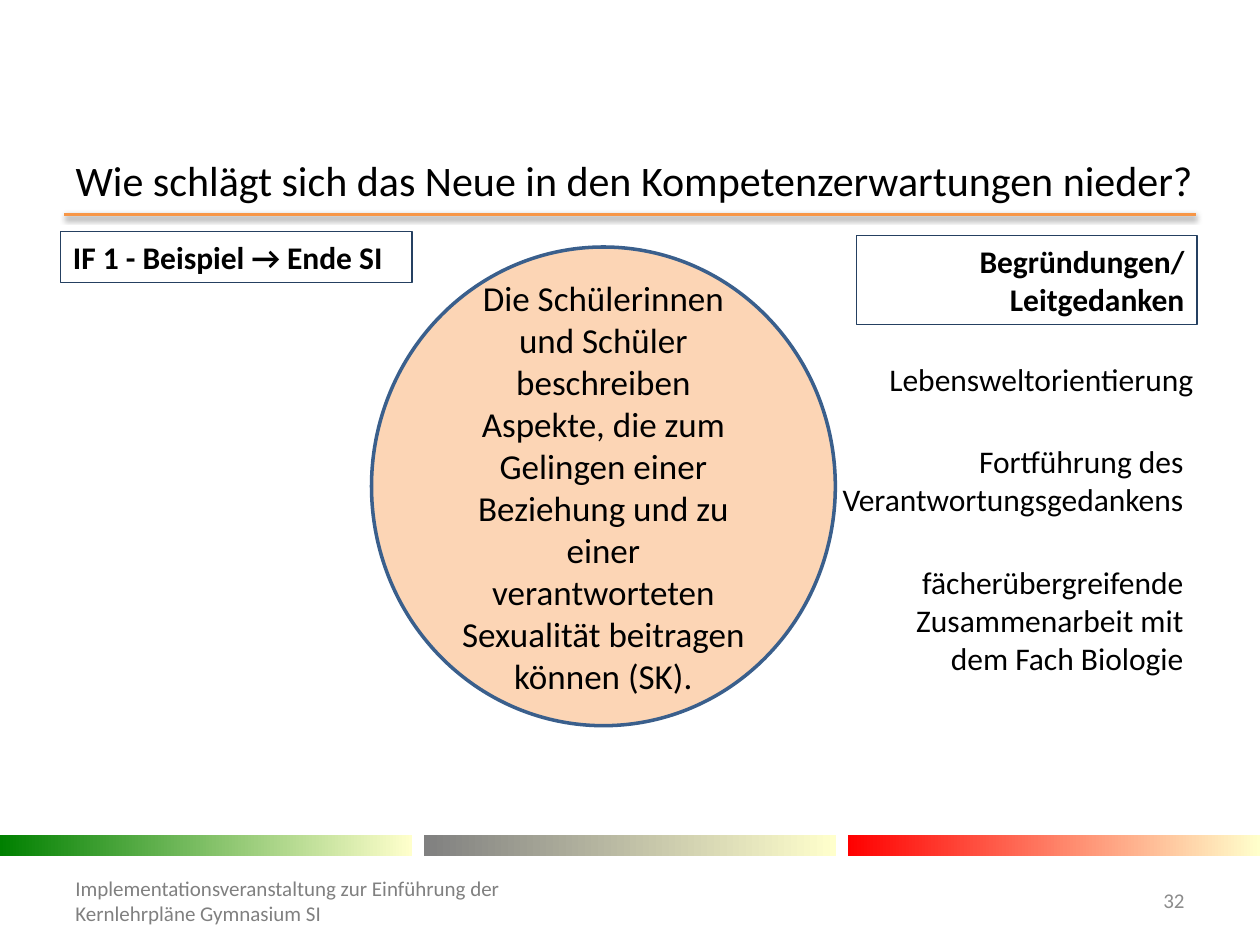
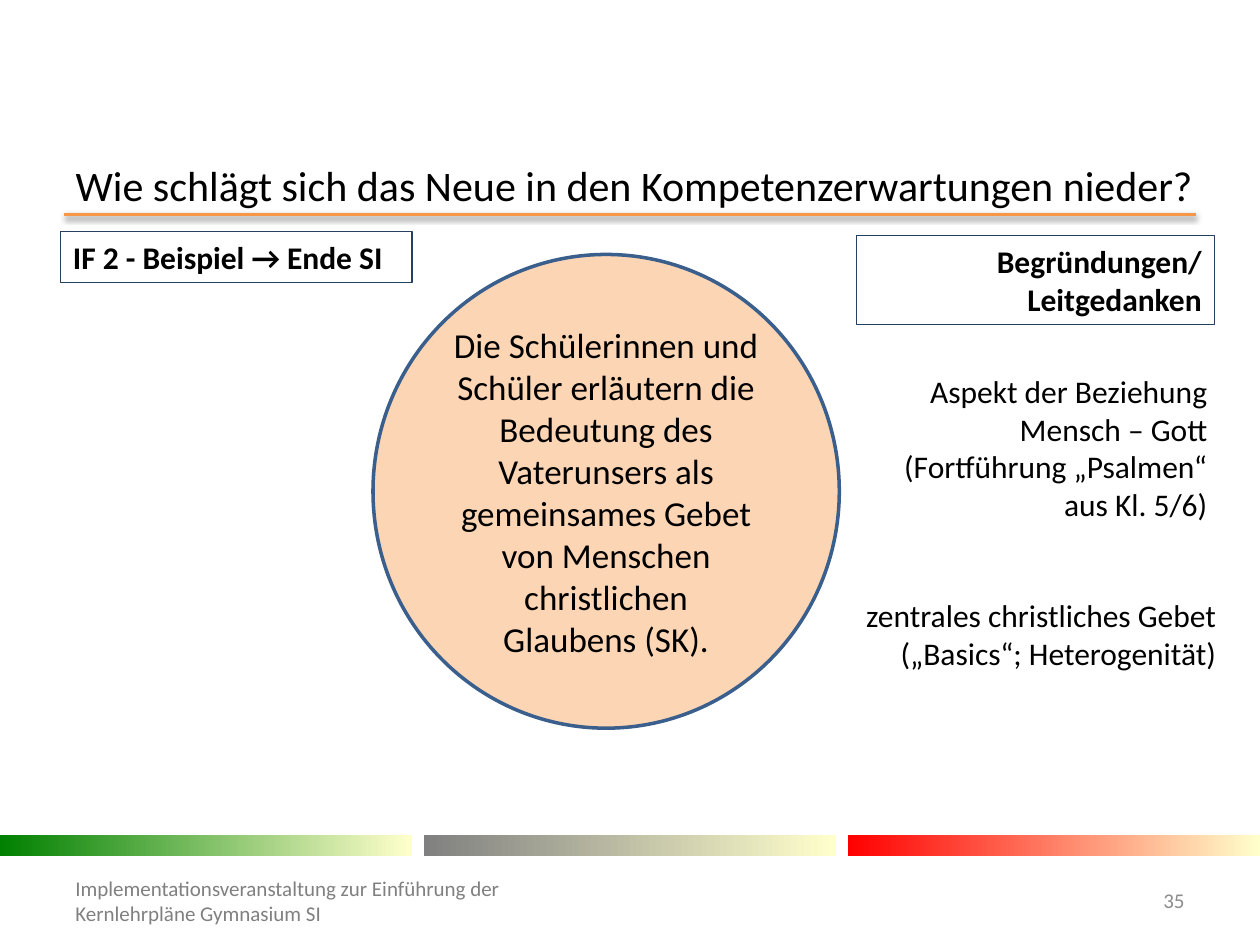
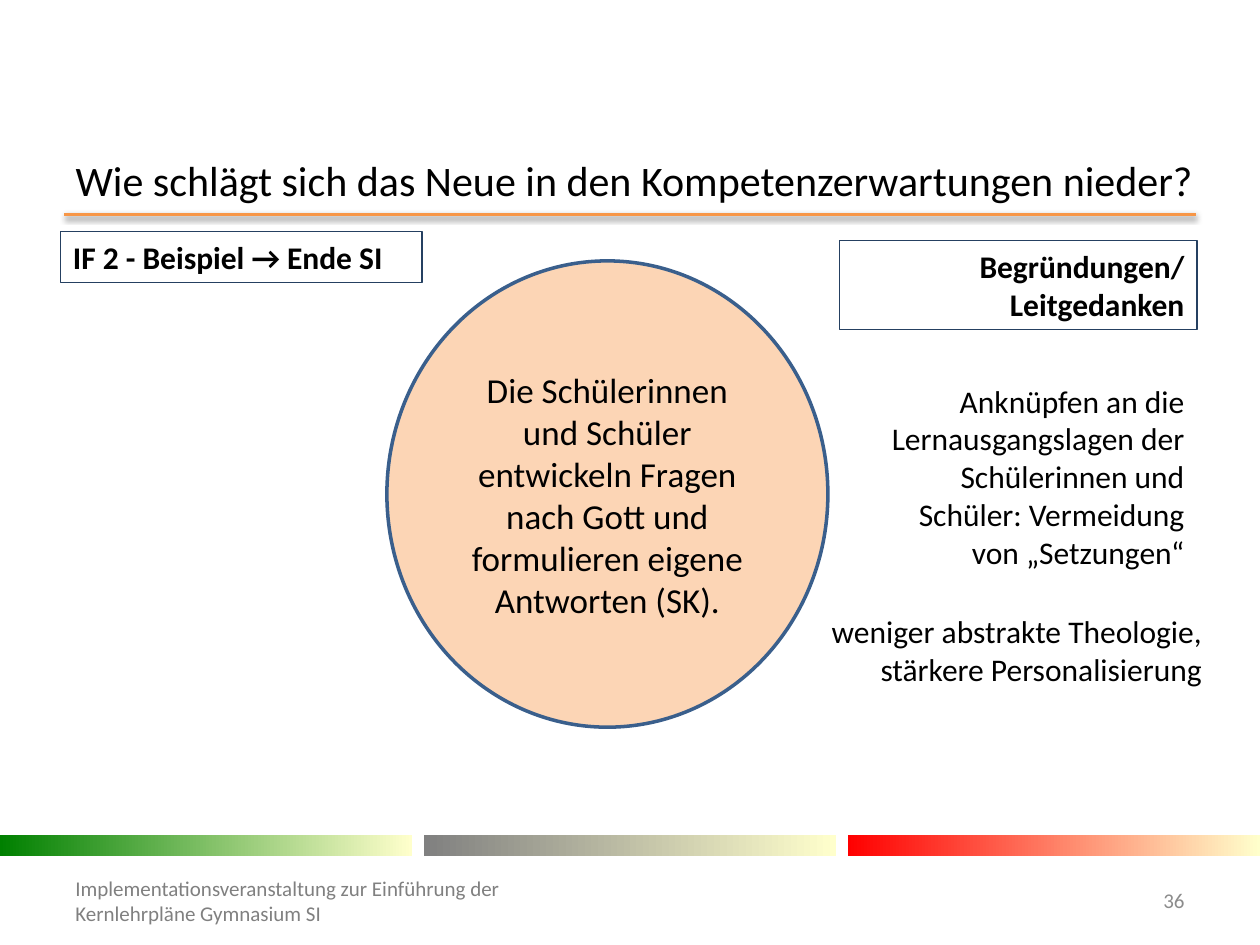
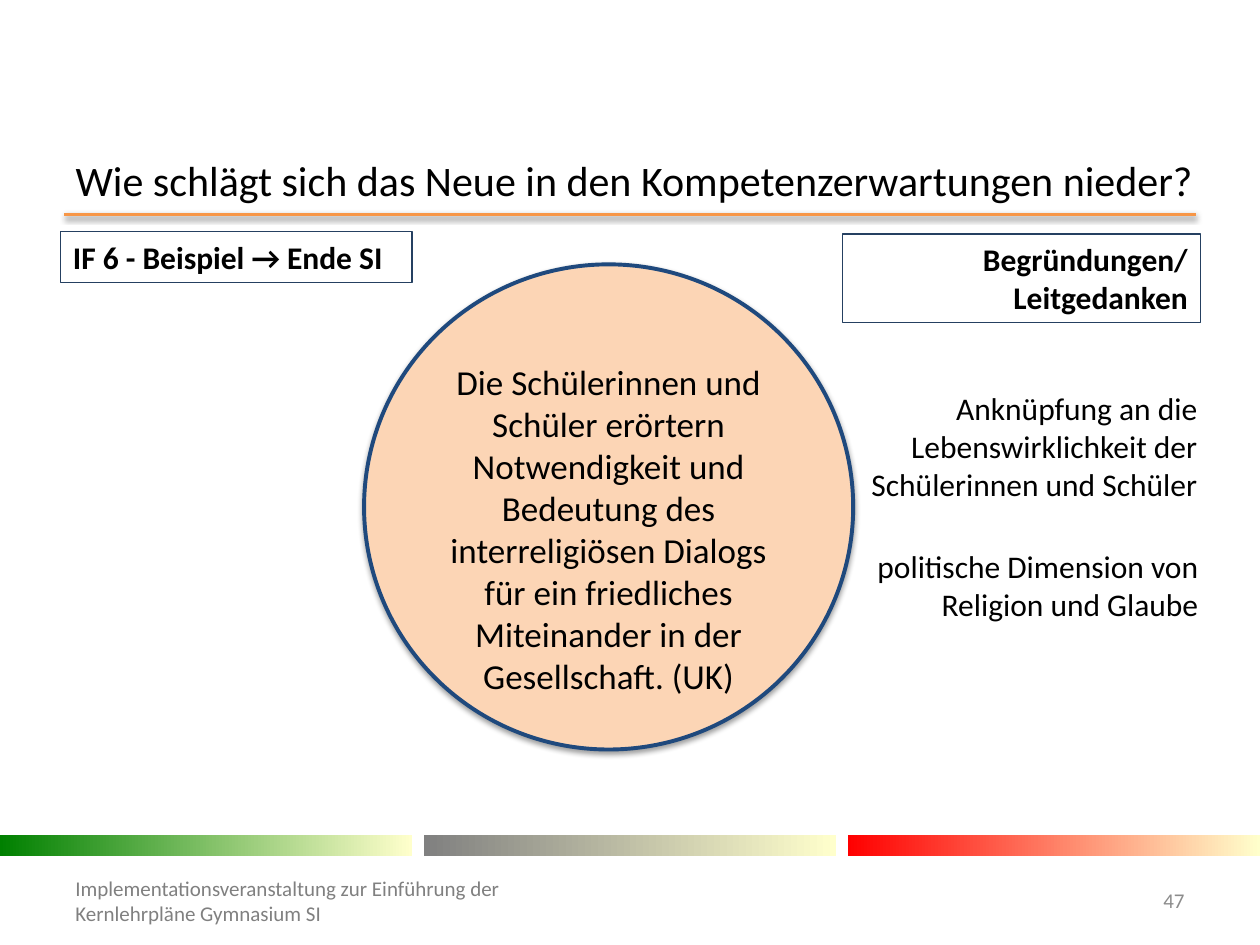
from lxml import etree
from pptx import Presentation
from pptx.dml.color import RGBColor
from pptx.enum.shapes import MSO_CONNECTOR, MSO_SHAPE
from pptx.enum.text import MSO_ANCHOR, MSO_AUTO_SIZE, PP_ALIGN
from pptx.oxml.ns import qn
from pptx.util import Cm, Pt

LEFT, CENTER, RIGHT = PP_ALIGN.LEFT, PP_ALIGN.CENTER, PP_ALIGN.RIGHT
TOP, MIDDLE = MSO_ANCHOR.TOP, MSO_ANCHOR.MIDDLE
RECTANGLE, OVAL = MSO_SHAPE.RECTANGLE, MSO_SHAPE.OVAL
STRAIGHT = MSO_CONNECTOR.STRAIGHT
NO_AUTOFIT, GROW = MSO_AUTO_SIZE.NONE, MSO_AUTO_SIZE.SHAPE_TO_FIT_TEXT

# Shared measures (cm), colours and text formats
SLIDE_WIDTH, SLIDE_HEIGHT = 25.4, 19.05
TITLE_LEFT, TITLE_WIDTH, TITLE_HEIGHT = 1.27, 23.5, 1
BAND_TOP, BAND_WIDTH, BAND_HEIGHT = 16.84, 8.31, 0.41
TEXT_MARGIN, LINE_HEIGHT = 0.25, 0.77
BLACK, ORANGE, PEACH, PALE_YELLOW = "000000", "F79646", "FCD5B5", "FFFFCC"
BAND_COLORS = ("008000", "808080", "FF0000")
FRAME_BLUE, CIRCLE_BLUE, DARK_BLUE = "254061", "3A5F8C", "1F497D"

TITLE_FORMAT = {"name": "Calibri", "size": Pt(24), "bold": False}
CIRCLE_FORMAT = {"name": "Calibri", "size": Pt(20)}
LABEL_FORMAT = {"name": "Calibri", "size": Pt(18), "bold": True}
NOTE_FORMAT = {"name": "Calibri", "size": Pt(18)}
FOOTER_FORMAT = {"name": "Calibri", "size": Pt(12)}

TITLE = "Wie schlägt sich das Neue in den Kompetenzerwartungen nieder?"
FOOTER = ("Implementationsveranstaltung zur Einführung der "
          "Kernlehrpläne Gymnasium SI")

# circle: left, top, width, height; reasons: left, top, width
# notes: right edge and top relative to the reasons box, width, lines, text
SLIDES = [
    {"number": 32, "topic": "IF 1", "circle": (7.49, 4.98, 9.35, 9.65),
     "text": "Die Schülerinnen und Schüler beschreiben Aspekte, die zum "
             "Gelingen einer Beziehung und zu einer verantworteten "
             "Sexualität beitragen können (SK).",
     "reasons": (17.27, 4.75, 6.86),
     "notes": [
         (0.18, 2.39, 7.11, 1, "Lebensweltorientierung"),
         (-0.02, 4.04, 7.8, 2, "Fortführung des Verantwortungsgedankens"),
         (-0.02, 6.48, 6.12, 3, "fächerübergreifende Zusammenarbeit mit "
                                "dem Fach Biologie")]},
    {"number": 35, "topic": "IF 2", "circle": (7.52, 5.13, 9.4, 9.55),
     "title_top": 3.23,
     "text": "Die Schülerinnen und Schüler erläutern die Bedeutung des "
             "Vaterunsers als gemeinsames Gebet von Menschen christlichen "
             "Glaubens (SK).",
     "reasons": (17.27, 4.75, 7.21),
     "notes": [
         (0.11, 2.62, 7.19, 4, "Aspekt der Beziehung Mensch – Gott "
                               "(Fortführung „Psalmen“ aus Kl. 5/6)"),
         (0.29, 7.14, 8.51, 2, "zentrales christliches Gebet "
                               "(„Basics“; Heterogenität)")]},
    {"number": 36, "topic": "IF 2", "circle": (7.8, 5.26, 8.89, 9.4),
     "topic_width": 7.29,
     "text": "Die Schülerinnen und Schüler entwickeln Fragen nach Gott und "
             "formulieren eigene Antworten (SK).",
     "reasons": (16.92, 4.85, 7.21),
     "notes": [
         (0, 2.72, 6.81, 5, "Anknüpfen an die Lernausgangslagen der "
                            "Schülerinnen und Schüler: Vermeidung von "
                            "„Setzungen“"),
         (0.35, 7.37, 9.19, 2, "weniger abstrakte Theologie, stärkere "
                               "Personalisierung")]},
    {"number": 47, "topic": "IF 6", "circle": (7.34, 5.33, 9.86, 9.78),
     "circle_style": {"line": DARK_BLUE, "weight": 2.25, "shadow": True,
                      "margin_top": 0.99},
     "text": "Die Schülerinnen und Schüler erörtern Notwendigkeit und "
             "Bedeutung des interreligiösen Dialogs für ein friedliches "
             "Miteinander in der Gesellschaft. (UK)",
     "reasons": (16.99, 4.72, 7.21),
     "notes": [
         (0.19, 3, 7.7, 3, "Anknüpfung an die Lebenswirklichkeit der "
                           "Schülerinnen und Schüler"),
         (0.21, 6.18, 7.21, 2, "politische Dimension von Religion und "
                               "Glaube")]},
]


# Helpers
def color(hex_value):
    return RGBColor.from_string(hex_value)


def lengths(box):
    return [Cm(value) for value in box]


def text_height(lines):
    return TEXT_MARGIN + LINE_HEIGHT * lines


def set_effects(shape, shadow=False):
    """Replace the theme effects by a soft drop shadow or by nothing."""
    effects = etree.SubElement(shape.element.spPr, qn("a:effectLst"))
    if shadow:
        outer = etree.SubElement(effects, qn("a:outerShdw"), blurRad="40000",
                                 dist="20000", dir="5400000", rotWithShape="0")
        tint = etree.SubElement(outer, qn("a:srgbClr"), val=BLACK)
        etree.SubElement(tint, qn("a:alpha"), val="38000")


def set_line(shape, hex_value, weight):
    shape.line.color.rgb = color(hex_value)
    shape.line.width = Pt(weight)


def write_text(shape, lines, font_format, align=LEFT, anchor=TOP,
               hex_value=BLACK, auto_size=NO_AUTOFIT):
    frame = shape.text_frame
    frame.text = "\n".join(lines)
    settings = {"word_wrap": True, "vertical_anchor": anchor,
                "auto_size": auto_size}
    for name, value in settings.items():
        setattr(frame, name, value)
    for paragraph in frame.paragraphs:
        paragraph.alignment = align
        font = paragraph.runs[0].font
        for name, value in font_format.items():
            setattr(font, name, value)
        font.color.rgb = color(hex_value)


def add_text(slide, box, text, font_format, **options):
    shape = slide.shapes.add_textbox(*lengths(box))
    write_text(shape, [text], font_format, **options)


def add_label(slide, box, lines, align=LEFT):
    label = slide.shapes.add_shape(RECTANGLE, *lengths(box))
    label.fill.background()
    set_line(label, FRAME_BLUE, 0.75)
    set_effects(label)
    write_text(label, lines, LABEL_FORMAT, align=align, auto_size=GROW)


# Title rule and colour bands, kept on the layout for all slides
def build_layout(slide, layout):
    rule = slide.shapes.add_connector(STRAIGHT, *lengths((1.3, 4.32, 24.1, 4.32)))
    set_line(rule, ORANGE, 2)
    set_effects(rule, shadow=True)
    parts = [rule]

    pitch = (SLIDE_WIDTH - BAND_WIDTH) / (len(BAND_COLORS) - 1)
    for index, band_color in enumerate(BAND_COLORS):
        band = slide.shapes.add_shape(RECTANGLE, *lengths(
            (index * pitch, BAND_TOP, BAND_WIDTH, BAND_HEIGHT)))
        band.fill.gradient()
        band.fill.gradient_angle = 0
        for stop, hex_value in zip(band.fill.gradient_stops,
                                   (band_color, PALE_YELLOW)):
            stop.color.rgb = color(hex_value)
        band.line.fill.background()
        set_effects(band)
        parts.append(band)

    for number, part in enumerate(parts, start=100):
        part.element.xpath(".//p:cNvPr")[0].set("id", str(number))
        layout.element.cSld.spTree.append(part.element)


# Title, footer and page number
def add_title(slide, top):
    title = slide.shapes.title
    box = (TITLE_LEFT, top, TITLE_WIDTH, TITLE_HEIGHT)
    title.left, title.top, title.width, title.height = lengths(box)
    write_text(title, [TITLE], TITLE_FORMAT, anchor=MIDDLE)


def add_footer(slide, number):
    add_text(slide, (1.27, 17.65, 10.24, 1), FOOTER, FOOTER_FORMAT,
             anchor=MIDDLE, hex_value="808080")
    add_text(slide, (22.5, 17.65, 1.63, 1), str(number), FOOTER_FORMAT,
             align=RIGHT, anchor=MIDDLE, hex_value="8C8C8C")


# Expected competence in the centre
def add_competence(slide, box, text, line=CIRCLE_BLUE, weight=2,
                   shadow=False, margin_top=0.13):
    circle = slide.shapes.add_shape(OVAL, *lengths(box))
    circle.fill.solid()
    circle.fill.fore_color.rgb = color(PEACH)
    set_line(circle, line, weight)
    set_effects(circle, shadow)
    write_text(circle, [text], CIRCLE_FORMAT, align=CENTER, anchor=MIDDLE)
    circle.text_frame.margin_top = Cm(margin_top)


# Reasons on the right: heading and notes below it
def add_reasons(slide, box, notes):
    left, top, width = box
    add_label(slide, (left, top, width, text_height(2)),
              ["Begründungen/", "Leitgedanken"], align=RIGHT)
    for right_shift, down, note_width, lines, text in notes:
        note_left = left + width + right_shift - note_width
        add_text(slide, (note_left, top + down, note_width, text_height(lines)),
                 text, NOTE_FORMAT, align=RIGHT, auto_size=GROW)


def fill_slide(slide, content):
    add_title(slide, content.get("title_top", 3.12))
    add_competence(slide, content["circle"], content["text"],
                   **content.get("circle_style", {}))
    add_label(slide, (1.22, 4.67, content.get("topic_width", 7.09), text_height(1)),
              [f"{content['topic']} - Beispiel → Ende SI"])
    add_reasons(slide, content["reasons"], content["notes"])
    add_footer(slide, content["number"])


def main():
    presentation = Presentation()
    presentation.slide_width = Cm(SLIDE_WIDTH)
    presentation.slide_height = Cm(SLIDE_HEIGHT)
    layout = presentation.slide_layouts.get_by_name("Title Only")
    for index, content in enumerate(SLIDES):
        slide = presentation.slides.add_slide(layout)
        if index == 0:
            build_layout(slide, layout)
        fill_slide(slide, content)
    presentation.save("out.pptx")


if __name__ == "__main__":
    main()
